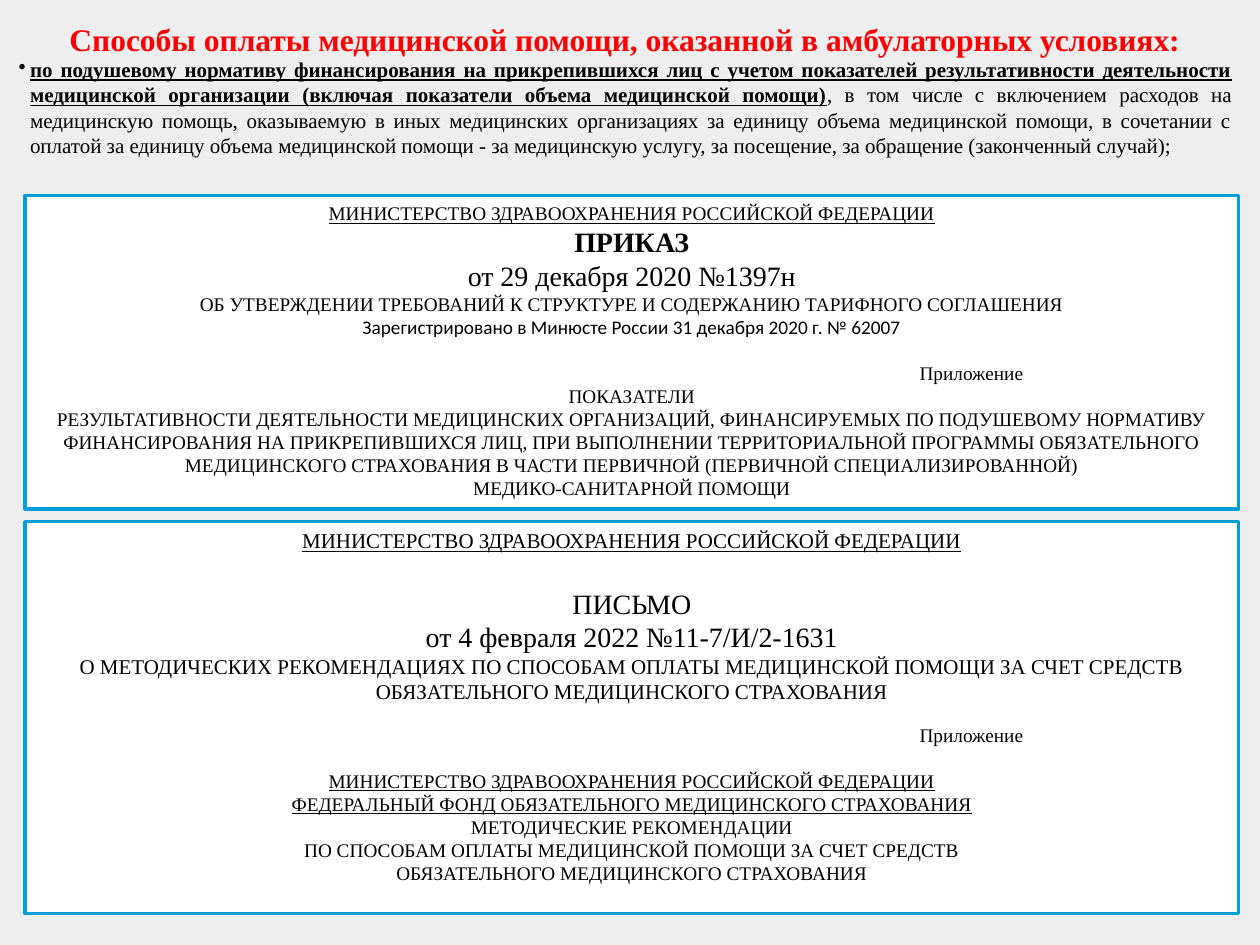
from pptx import Presentation
from pptx.dml.color import RGBColor as RGB
from pptx.enum.shapes import MSO_SHAPE as SHAPE
from pptx.enum.text import MSO_ANCHOR as ANCHOR, MSO_AUTO_SIZE as AUTO, PP_ALIGN as AL
from pptx.oxml.ns import qn
from pptx.util import Inches, Pt

THEME = dict(
    back=RGB(0xEE, 0xEE, 0xEE), panel=RGB(0xFF, 0xFF, 0xFF), border=RGB(0x00, 0x9D, 0xD9),
    title=RGB(0xFF, 0, 0), ink=RGB(0, 0, 0), serif="Times New Roman", sans="Calibri",
    heading=18, number=16, body=12, small=11)

TITLE = "Способы оплаты медицинской помощи, оказанной в амбулаторных условиях:"
METHOD = [
    ("по подушевому нормативу финансирования на прикрепившихся лиц с учетом показателей "
     "результативности деятельности медицинской организации (включая показатели объема "
     "медицинской помощи)", dict(bold=True, underline=True)),
    (", в том числе с включением расходов на медицинскую помощь, оказываемую в иных "
     "медицинских организациях за единицу объема медицинской помощи, в сочетании с оплатой "
     "за единицу объема медицинской помощи - за медицинскую услугу, за посещение, "
     "за обращение (законченный случай);", {}),
]
MINISTRY = "МИНИСТЕРСТВО ЗДРАВООХРАНЕНИЯ РОССИЙСКОЙ ФЕДЕРАЦИИ"
INSURANCE = "ОБЯЗАТЕЛЬНОГО МЕДИЦИНСКОГО СТРАХОВАНИЯ"
ANNEX = dict(align=AL.LEFT, indent=7)
ORDER = [
    (MINISTRY, dict(underline=True)),
    ("ПРИКАЗ", dict(size="number", bold=True)),
    ("от 29 декабря 2020 №1397н", dict(size="number")),
    ("ОБ УТВЕРЖДЕНИИ ТРЕБОВАНИЙ К СТРУКТУРЕ И СОДЕРЖАНИЮ ТАРИФНОГО СОГЛАШЕНИЯ", {}),
    ("Зарегистрировано в Минюсте России 31 декабря 2020 г. № 62007", dict(font="sans")),
    ("Приложение", dict(before=13, **ANNEX)),
    ("ПОКАЗАТЕЛИ", {}),
    ("РЕЗУЛЬТАТИВНОСТИ ДЕЯТЕЛЬНОСТИ МЕДИЦИНСКИХ ОРГАНИЗАЦИЙ, ФИНАНСИРУЕМЫХ ПО ПОДУШЕВОМУ "
     "НОРМАТИВУ ФИНАНСИРОВАНИЯ НА ПРИКРЕПИВШИХСЯ ЛИЦ, ПРИ ВЫПОЛНЕНИИ ТЕРРИТОРИАЛЬНОЙ "
     "ПРОГРАММЫ ОБЯЗАТЕЛЬНОГО МЕДИЦИНСКОГО СТРАХОВАНИЯ В ЧАСТИ ПЕРВИЧНОЙ "
     "(ПЕРВИЧНОЙ СПЕЦИАЛИЗИРОВАННОЙ)", {}),
    ("МЕДИКО-САНИТАРНОЙ ПОМОЩИ", {}),
]
LETTER = [
    (MINISTRY, dict(size="body", underline=True)),
    ("ПИСЬМО", dict(size="number", before=19)),
    ("от 4 февраля 2022 №11-7/И/2-1631", dict(size="number")),
    ("О МЕТОДИЧЕСКИХ РЕКОМЕНДАЦИЯХ ПО СПОСОБАМ ОПЛАТЫ МЕДИЦИНСКОЙ ПОМОЩИ ЗА СЧЕТ СРЕДСТВ",
     dict(size="body")),
    (INSURANCE, dict(size="body")),
    ("Приложение", dict(before=11, **ANNEX)),
    (MINISTRY, dict(underline=True, before=13)),
    ("ФЕДЕРАЛЬНЫЙ ФОНД ОБЯЗАТЕЛЬНОГО МЕДИЦИНСКОГО СТРАХОВАНИЯ", dict(underline=True)),
    ("МЕТОДИЧЕСКИЕ РЕКОМЕНДАЦИИ", {}),
    ("ПО СПОСОБАМ ОПЛАТЫ МЕДИЦИНСКОЙ ПОМОЩИ ЗА СЧЕТ СРЕДСТВ", {}),
    (INSURANCE, {}),
]
HEAD_LEFT, HEAD_WIDTH = 0.04, 9.84
PANEL_LEFT, PANEL_WIDTH = 0.2, 9.63
PANELS = [(1.55, 2.49, ORDER), (4.14, 3.11, LETTER)]


def add_text(p, text, size="small", font="serif", color="ink", bold=False, underline=False,
             align=AL.CENTER, before=0, indent=0, hanging=0, bullet=None):
    """Append a formatted run to a paragraph."""
    p.alignment = align
    p.space_before = Pt(before)
    if indent:
        pPr = p._p.get_or_add_pPr()
        pPr.set("marL", str(Inches(indent)))
        pPr.set("indent", str(-Inches(hanging)))
        if bullet and pPr.find(qn("a:buChar")) is None:
            pPr.makeelement(qn("a:buChar"), {})
            mark = pPr.makeelement(qn("a:buChar"), {"char": bullet})
            pPr.append(mark)
    r = p.add_run()
    r.text = text
    f = r.font
    f.name, f.size, f.color.rgb = THEME[font], Pt(THEME[size]), THEME[color]
    f.bold, f.underline = bold, underline


def prepare(sp, top=0.05, bottom=0.05):
    """Return the shape's text frame, wrapped and anchored at the top."""
    tf = sp.text_frame
    tf.word_wrap, tf.auto_size, tf.vertical_anchor = True, AUTO.NONE, ANCHOR.TOP
    tf.margin_left = tf.margin_right = Inches(0.1)
    tf.margin_top, tf.margin_bottom = Inches(top), Inches(bottom)
    return tf


def add_panel(s, top, height, lines):
    """Draw a bordered panel holding one document's heading lines."""
    sp = s.shapes.add_shape(SHAPE.RECTANGLE, *map(Inches, (PANEL_LEFT, top, PANEL_WIDTH, height)))
    sp.shadow.inherit = False
    sp.fill.solid()
    sp.fill.fore_color.rgb = THEME["panel"]
    sp.line.color.rgb, sp.line.width = THEME["border"], Pt(2)
    tf = prepare(sp)
    for i, (text, fmt) in enumerate(lines):
        add_text(tf.add_paragraph() if i else tf.paragraphs[0], text, **fmt)


def main():
    """Build and save the slide."""
    prs = Presentation()
    prs.slide_width, prs.slide_height = Inches(10), Inches(7.5)
    s = prs.slides.add_slide(prs.slide_layouts[5])
    s.background.fill.solid()
    s.background.fill.fore_color.rgb = THEME["back"]

    title = s.shapes.title
    title.left, title.top, title.width, title.height = map(
        Inches, (HEAD_LEFT, 0.11, HEAD_WIDTH, 0.34))
    add_text(prepare(title, bottom=0).paragraphs[0], TITLE,
             size="heading", color="title", bold=True)

    box = s.shapes.add_textbox(*map(Inches, (HEAD_LEFT, 0.45, HEAD_WIDTH, 0.87)))
    p = prepare(box, top=0).paragraphs[0]
    for text, fmt in METHOD:
        add_text(p, text, size="body", align=AL.JUSTIFY,
                 indent=0.1, hanging=0.09, bullet="•", **fmt)

    for panel in PANELS:
        add_panel(s, *panel)
    prs.save("out.pptx")


if __name__ == "__main__":
    main()
